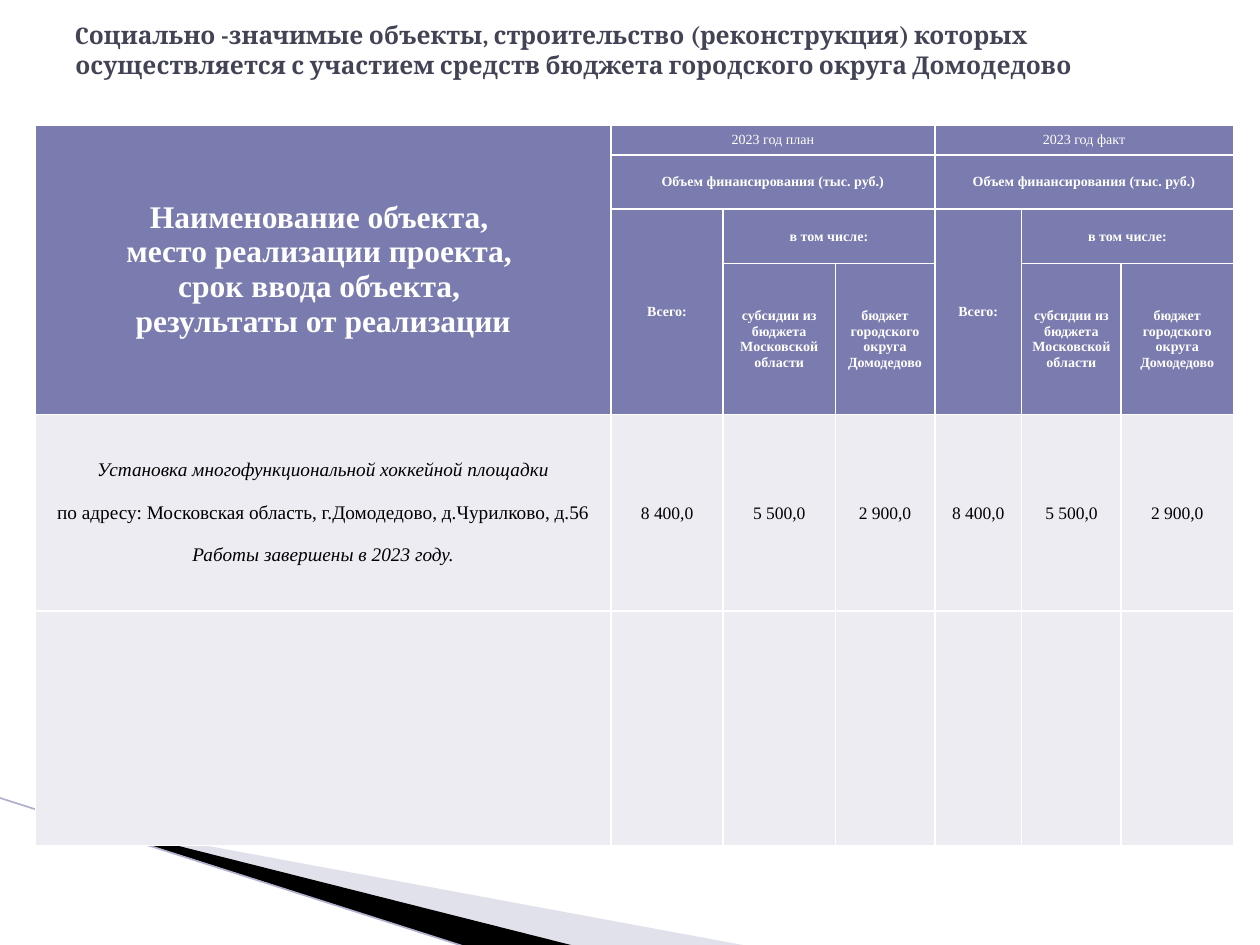
from dataclasses import dataclass

from lxml import etree
from pptx import Presentation
from pptx.dml.color import RGBColor
from pptx.enum.shapes import MSO_CONNECTOR
from pptx.enum.text import MSO_ANCHOR, PP_ALIGN
from pptx.oxml.ns import qn
from pptx.util import Inches, Pt

LINE = MSO_CONNECTOR.STRAIGHT
MIDDLE = MSO_ANCHOR.MIDDLE
LEFT, CENTER = PP_ALIGN.LEFT, PP_ALIGN.CENTER
SERIF = "Times New Roman"
WHITE, BLACK, HEAD, BODY = "FFFFFF", "000000", "7A7BAE", "ECECF2"
COLS = [4.57, 0.89, 0.89, 0.79, 0.69, 0.79, 0.89]
ROWS = [0.24, 0.43, 0.43, 0.55, 1.56, 1.86]


@dataclass
class Wedge:
    points: list
    color: str
    alpha: int = 100


@dataclass
class Label:
    row: int
    col: int
    lines: list
    rows: int = 1
    cols: int = 1
    size: int = 8
    bold: bool = True


def rgb(value: str) -> RGBColor:
    return RGBColor.from_string(value)


def write(frame, lines, *, size, color, font=SERIF, bold=False,
          slant=(), align=CENTER, gap=0) -> None:
    """Write one paragraph per line; slant holds the italic line numbers."""
    for i, line in enumerate(lines):
        para = frame.paragraphs[0] if i == 0 else frame.add_paragraph()
        para.alignment = align
        if i and gap:
            para.space_before = Pt(gap)
        run = para.add_run()
        run.text = line
        run.font.name, run.font.size = font, Pt(size)
        run.font.bold, run.font.italic = bold, i in slant
        run.font.color.rgb = rgb(color)


def draw_wedge(slide, wedge: Wedge) -> None:
    start, *rest = [(Inches(x), Inches(y)) for x, y in wedge.points]
    path = slide.shapes.build_freeform(*start, scale=1.0)
    path.add_line_segments(rest, close=True)
    shape = path.convert_to_shape()
    shape.shadow.inherit = False
    shape.line.fill.background()
    shape.fill.solid()
    shape.fill.fore_color.rgb = rgb(wedge.color)
    if wedge.alpha < 100:
        tint = shape.fill._xPr.find(".//" + qn("a:srgbClr"))
        etree.SubElement(tint, qn("a:alpha"), val=str(wedge.alpha * 1000))


def style_cell(cell, color: str, pad: float) -> None:
    cell.margin_left = cell.margin_right = cell.margin_top = Inches(pad)
    cell.margin_bottom = 0
    cell.vertical_anchor = MIDDLE
    props = cell._tc.get_or_add_tcPr()
    for side in ("lnL", "lnR", "lnT", "lnB"):
        edge = etree.SubElement(props, qn("a:" + side), w=str(Pt(1)))
        fill = etree.SubElement(edge, qn("a:solidFill"))
        etree.SubElement(fill, qn("a:srgbClr"), val=WHITE)
    cell.fill.solid()
    cell.fill.fore_color.rgb = rgb(color)


def draw_label(table, label: Label) -> None:
    cell = table.cell(label.row, label.col)
    if label.rows * label.cols > 1:
        cell.merge(table.cell(label.row + label.rows - 1,
                              label.col + label.cols - 1))
    write(cell.text_frame, label.lines, size=label.size,
          color=WHITE, bold=label.bold)


def year_labels(col: int, year: str) -> list[Label]:
    return [
        Label(0, col, [year], cols=3, bold=False),
        Label(1, col, ["Объем финансирования (тыс. руб.)"], cols=3),
        Label(2, col, ["Всего:"], rows=2),
        Label(2, col + 1, ["в том числе:"], cols=2),
        Label(3, col + 1, ["субсидии из бюджета Московской области"]),
        Label(3, col + 2, ["бюджет городского округа Домодедово"]),
    ]


def draw_table(slide) -> None:
    table = slide.shapes.add_table(
        len(ROWS), len(COLS), Inches(0.28), Inches(0.99),
        Inches(sum(COLS)), Inches(sum(ROWS))).table
    table.first_row = table.horz_banding = False
    for col, width in zip(table.columns, COLS):
        col.width = Inches(width)
    for row, height in zip(table.rows, ROWS):
        row.height = Inches(height)
    for r in range(len(ROWS)):
        for c in range(len(COLS)):
            pad = 0.01 if r == 4 and c else 0
            style_cell(table.cell(r, c), HEAD if r < 4 else BODY, pad)

    # Header
    name = Label(0, 0, ["Наименование объекта, ", "место реализации проекта, ",
                        "срок ввода объекта, ", "результаты от реализации"],
                 rows=4, size=18)
    for label in [name, *year_labels(1, "2023 год план"),
                  *year_labels(4, "2023 год факт")]:
        draw_label(table, label)

    # Object and its sums
    write(table.cell(4, 0).text_frame,
          ["Установка многофункциональной хоккейной площадки",
           "по адресу: Московская область, г.Домодедово, д.Чурилково, д.56",
           "Работы завершены в 2023 году."],
          size=11, color=BLACK, slant=(0, 2), gap=12)
    for c, value in enumerate(["8 400,0", "5 500,0", "2 900,0"] * 2, 1):
        write(table.cell(4, c).text_frame, [value], size=10, color=BLACK)


def main() -> None:
    deck = Presentation()
    deck.slide_width, deck.slide_height = Inches(10), Inches(7.5)
    slide = deck.slides.add_slide(deck.slide_layouts[6])

    # Corner decoration
    for wedge in (
        Wedge([(0.55, 6.51), (5.95, 7.51), (4.56, 7.51), (0.55, 6.5)],
              "B6B6D1", 40),
        Wedge([(0.53, 6.49), (4.57, 7.51), (3.72, 7.52), (0.54, 6.5)], BLACK),
    ):
        draw_wedge(slide, wedge)
    edge = slide.shapes.add_connector(LINE, Inches(-0.01), Inches(6.33),
                                      Inches(3.71), Inches(7.52))
    edge.line.color.rgb = rgb("AFB0CC")
    edge.line.width = Pt(0.95)
    etree.SubElement(edge._element.spPr, qn("a:effectLst"))

    # Title
    title = slide.shapes.add_textbox(Inches(0.5), Inches(0.05),
                                     Inches(9), Inches(0.69)).text_frame
    title.word_wrap = True
    title.vertical_anchor = MIDDLE
    write(title, ["Cоциально -значимые объекты, строительство (реконструкция) "
                  "которых осуществляется с участием средств бюджета "
                  "городского округа Домодедово"],
          size=14, color="424456", font="Cambria", bold=True, align=LEFT)

    draw_table(slide)
    deck.save("out.pptx")


if __name__ == "__main__":
    main()
